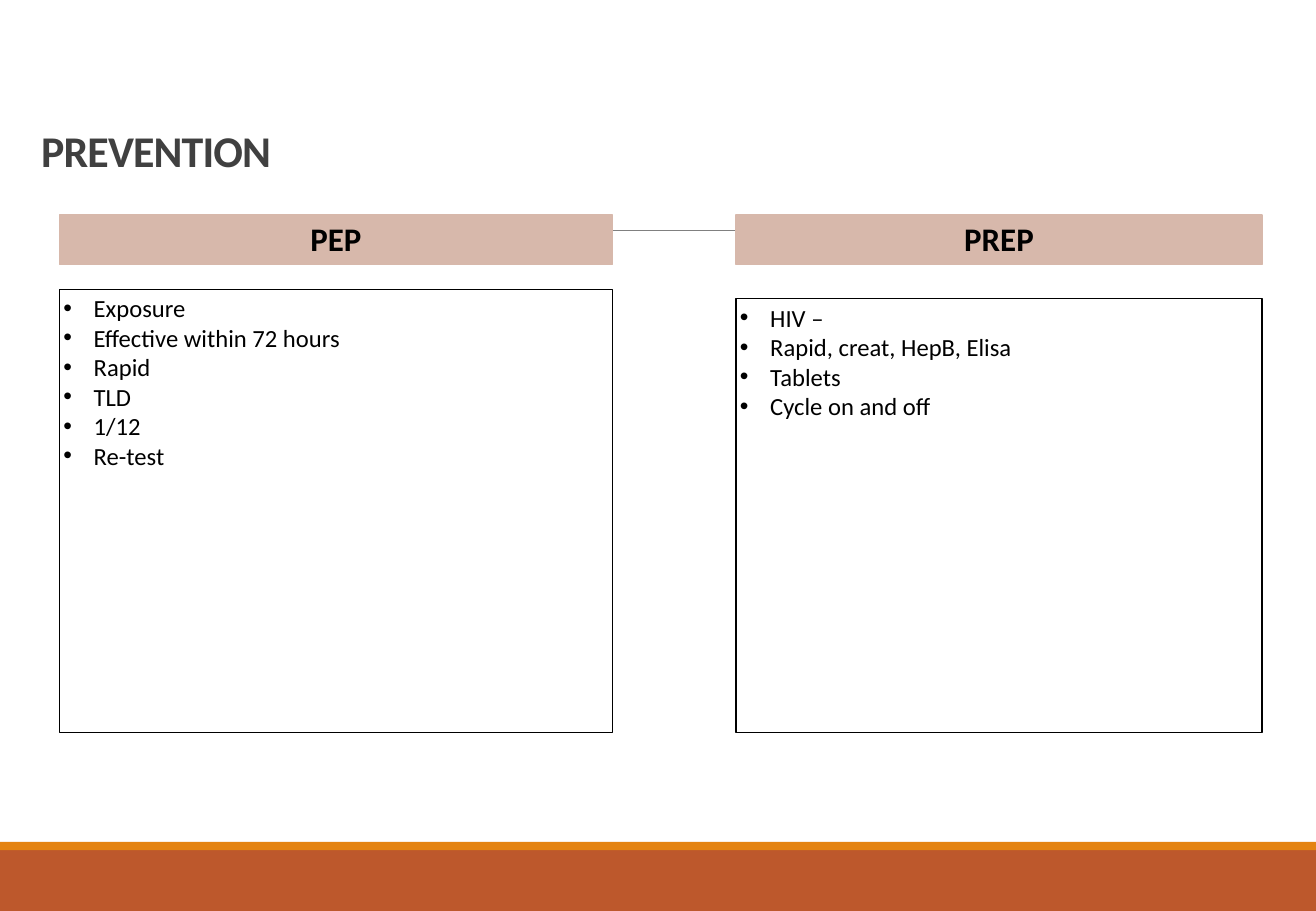
from dataclasses import dataclass

from lxml.etree import SubElement
from pptx import Presentation
from pptx.dml.color import RGBColor
from pptx.enum.shapes import MSO_CONNECTOR, MSO_SHAPE
from pptx.enum.text import MSO_ANCHOR, PP_ALIGN
from pptx.oxml.ns import qn
from pptx.shapes.autoshape import Shape
from pptx.slide import Slide
from pptx.text.text import TextFrame, _Paragraph as Paragraph
from pptx.util import Pt

WIDTH, HEIGHT = 780, 540
FONT = "Calibri"
BLACK, WHITE, HEADER_FILL = "000000", "FFFFFF", "D7B8AB"
HEADER_TOP, HEADER_HEIGHT = 127.4, 29.5
BODY_BOTTOM = 434.2
INSET = 2.2
INDENT = 18


@dataclass
class Column:
    heading: str
    items: list[str]
    left: float
    width: float
    body_top: float


@dataclass
class Band:
    top: float
    height: float
    color: str


COLUMNS = [
    Column("PEP", ["Exposure", "Effective within 72 hours", "Rapid", "TLD",
                   "1/12", "Re-test"], 35.3, 327.6, 171.4),
    Column("PREP", ["HIV –", "Rapid, creat, HepB, Elisa", "Tablets",
                    "Cycle on and off"], 436.3, 311.8, 177.1),
]
BANDS = [Band(504, 36, "BD582C"), Band(499, 5, "E48312")]


def rgb(value: str) -> RGBColor:
    return RGBColor.from_string(value)


def add_rect(slide: Slide, left: float, top: float, width: float, height: float,
             fill: str, line: str | None = None) -> Shape:
    sp = slide.shapes.add_shape(MSO_SHAPE.RECTANGLE, Pt(left), Pt(top),
                                Pt(width), Pt(height))
    sp.shadow.inherit = False
    sp.fill.solid()
    sp.fill.fore_color.rgb = rgb(fill)
    if line:
        sp.line.color.rgb = rgb(line)
        sp.line.width = Pt(0.75)
    else:
        sp.line.fill.background()
    return sp


def write(tf: TextFrame, text: str, size: float, color: str = BLACK,
          bold: bool = False, align: PP_ALIGN = PP_ALIGN.LEFT) -> None:
    """Fill the frame, one paragraph per line of text."""
    tf.word_wrap = True
    tf.text = text
    for p in tf.paragraphs:
        p.alignment = align
        for r in p.runs:
            r.font.name = FONT
            r.font.size = Pt(size)
            r.font.bold = bold
            r.font.color.rgb = rgb(color)


def set_insets(tf: TextFrame) -> None:
    tf.margin_left = tf.margin_right = tf.margin_top = tf.margin_bottom = Pt(INSET)
    tf.vertical_anchor = MSO_ANCHOR.TOP


def add_bullet(p: Paragraph) -> None:
    pPr = p._p.get_or_add_pPr()
    pPr.set("marL", str(Pt(INDENT)))
    pPr.set("indent", str(-Pt(INDENT)))
    SubElement(pPr, qn("a:buFont")).set("typeface", "Arial")
    SubElement(pPr, qn("a:buChar")).set("char", "•")


def add_rule(slide: Slide) -> None:
    rule = slide.shapes.add_connector(MSO_CONNECTOR.STRAIGHT, Pt(76.3), Pt(136.7),
                                      Pt(714.2), Pt(136.7))
    rule.line.color.rgb = rgb("808080")
    rule.line.width = Pt(0.5)
    SubElement(rule._element.spPr, qn("a:effectLst"))


def add_column(slide: Slide, col: Column) -> None:
    body = add_rect(slide, col.left, col.body_top, col.width,
                    BODY_BOTTOM - col.body_top, WHITE, BLACK)
    set_insets(body.text_frame)
    write(body.text_frame, "\n".join(col.items), 14.6)
    for p in body.text_frame.paragraphs:
        add_bullet(p)

    header = add_rect(slide, col.left, HEADER_TOP, col.width, HEADER_HEIGHT,
                      HEADER_FILL, HEADER_FILL)
    set_insets(header.text_frame)
    write(header.text_frame, col.heading, 19.5, bold=True, align=PP_ALIGN.CENTER)


def add_title(slide: Slide, text: str) -> None:
    tf = slide.shapes.add_textbox(Pt(17.3), Pt(62.6), Pt(643.7), Pt(45.4)).text_frame
    tf.vertical_anchor = MSO_ANCHOR.BOTTOM
    write(tf, text, 26, "404040", bold=True)
    p = tf.paragraphs[0]
    p.line_spacing = 0.85
    p.runs[0]._r.get_or_add_rPr().set("spc", "-50")


def main() -> None:
    prs = Presentation()
    prs.slide_width, prs.slide_height = Pt(WIDTH), Pt(HEIGHT)
    slide = prs.slides.add_slide(prs.slide_layouts[6])
    for band in BANDS:
        add_rect(slide, 0, band.top, WIDTH, band.height, band.color)
    add_rule(slide)
    for col in COLUMNS:
        add_column(slide, col)
    add_title(slide, "PREVENTION")
    prs.save("out.pptx")


if __name__ == "__main__":
    main()
